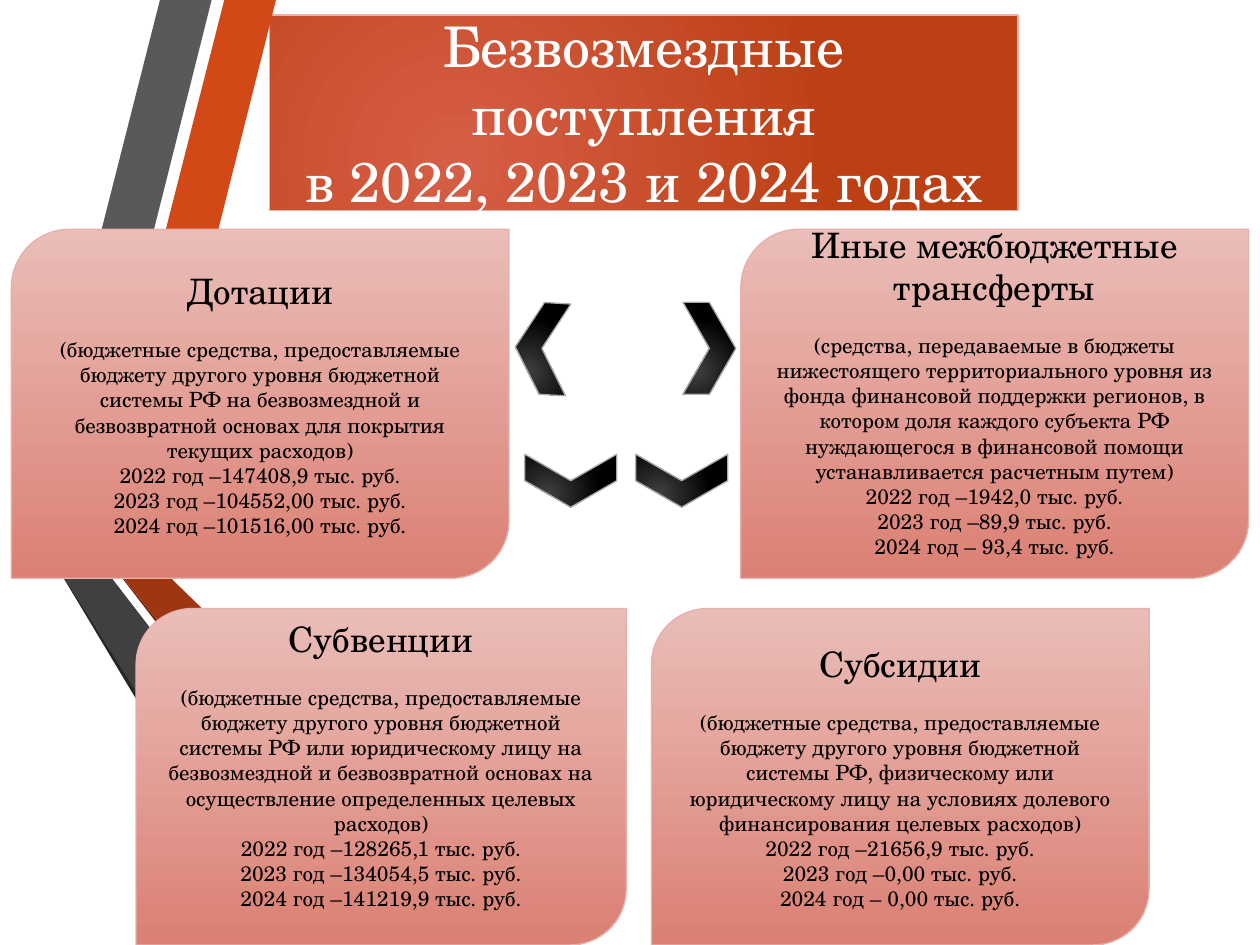
"""Build the slide on gratuitous budget receipts for 2022-2024."""
from lxml import etree
from pptx import Presentation
from pptx.dml.color import RGBColor
from pptx.enum.shapes import MSO_SHAPE
from pptx.enum.text import MSO_ANCHOR, MSO_AUTO_SIZE, PP_ALIGN
from pptx.oxml.ns import qn
from pptx.util import Inches, Pt

CARD_SHAPE = MSO_SHAPE.ROUND_2_DIAG_RECTANGLE
CHEVRON = MSO_SHAPE.CHEVRON
CENTER = PP_ALIGN.CENTER
MIDDLE = MSO_ANCHOR.MIDDLE
NO_AUTOFIT = MSO_AUTO_SIZE.NONE
FONT = "TeX Gyre Schola"
COLORS = {
    "white": "FFFFFF", "black": "000000",
    "title_light": "D65E46", "title_dark": "BC4014",
    "card_light": "EABDB8", "card_dark": "DB8074", "card_line": "E6B1AC",
    "arrow_light": "404040", "arrow_line": "ABABAB",
    "orange": "D34817", "orange_fold": "9E3611", "orange_edge": "69240C",
    "gray": "595959", "gray_fold": "404040", "gray_edge": "262626",
}


def paint(shape, light, dark, outline, radial):
    shape.fill.gradient()
    for stop, color in zip(shape.fill.gradient_stops, (light, dark)):
        stop.color.rgb = RGBColor.from_string(COLORS[color])
    if radial:
        gradient = shape._element.spPr.find(qn("a:gradFill"))
        gradient.remove(gradient.find(qn("a:lin")))
        glow = etree.SubElement(gradient, qn("a:path"), path="circle")
        etree.SubElement(glow, qn("a:fillToRect"), l="50000", t="100000", r="100000", b="50000")
    else:
        shape.fill.gradient_angle = 270
    shape.line.color.rgb = RGBColor.from_string(COLORS[outline])
    shape.line.width = Pt(0.75)


def write(paragraph, text, size, color):
    paragraph.text = text
    paragraph.alignment = CENTER
    paragraph.font.name = FONT
    paragraph.font.size = Pt(size)
    paragraph.font.color.rgb = RGBColor.from_string(COLORS[color])


prs = Presentation()
prs.slide_width, prs.slide_height = Inches(10), Inches(7.5)
slide = prs.slides.add_slide(prs.slide_layouts[5])

ribbons = [
    ("orange", [(0.7, 4.24), (1.1, 4.34), (2.19, 0), (1.78, 0)]),
    ("gray", [(1.68, 0), (1.27, 0), (0.22, 4.13), (0.62, 4.22)]),
    ("gray_edge", [(0.23, 4.13), (2.25, 7.5), (2.35, 7.5)]),
    ("orange_edge", [(3.3, 7.5), (0.71, 4.25), (3.21, 7.5)]),
    ("orange_fold", [(0.7, 4.24), (0.71, 4.25), (3.3, 7.5), (4.35, 7.5), (1.1, 4.34)]),
    ("gray_fold", [(3.13, 7.5), (0.68, 4.32), (0.62, 4.22), (0.22, 4.13), (2.35, 7.5)]),
]
for color, corners in ribbons:
    points = [(Inches(x), Inches(y)) for x, y in corners]
    outline = slide.shapes.build_freeform(*points[0])
    outline.add_line_segments(points[1:])
    ribbon = outline.convert_to_shape()
    ribbon.shadow.inherit = False
    ribbon.fill.solid()
    ribbon.fill.fore_color.rgb = RGBColor.from_string(COLORS[color])
    ribbon.line.fill.background()

title = slide.shapes.title
title.left, title.top = Inches(2.14), Inches(0.12)
title.width, title.height = Inches(5.94), Inches(1.55)
etree.SubElement(title._element.spPr, qn("a:prstGeom"), prst="roundRect")
paint(title, "title_light", "title_dark", "card_line", radial=True)
title.text_frame.text = "Безвозмездные поступления\nв 2022, 2023 и 2024 годах"
title.text_frame.auto_size = NO_AUTOFIT
title.text_frame.vertical_anchor = MIDDLE
for line in title.text_frame.paragraphs:
    write(line, line.text, 32, "white")

cards = [
    (0.09, 1.82, 3.95, 2.77, 0.05, "Дотации",
     "(бюджетные средства, предоставляемые бюджету другого уровня бюджетной системы РФ "
     "на безвозмездной и безвозвратной основах для покрытия текущих расходов)",
     ("–147408,9", "–104552,00", "–101516,00")),
    (1.08, 4.83, 3.89, 2.67, 0.25, "Субвенции",
     "(бюджетные средства, предоставляемые бюджету другого уровня бюджетной системы РФ "
     "или юридическому лицу на безвозмездной и безвозвратной основах "
     "на осуществление определенных целевых расходов)",
     ("–128265,1", "–134054,5", "–141219,9")),
    (5.17, 4.83, 3.95, 2.67, 0.05, "Субсидии",
     "(бюджетные средства, предоставляемые бюджету другого уровня бюджетной системы РФ, "
     "физическому или юридическому лицу на условиях долевого финансирования целевых расходов)",
     ("–21656,9", "–0,00", "– 0,00")),
    (5.88, 1.82, 4.03, 2.77, 0.25, "Иные межбюджетные трансферты",
     "(средства, передаваемые в бюджеты нижестоящего территориального уровня из фонда "
     "финансовой поддержки регионов, в котором доля каждого субъекта РФ нуждающегося "
     "в финансовой помощи устанавливается расчетным путем)",
     ("–1942,0", "–89,9", "– 93,4")),
]
for left, top, width, height, bottom_margin, heading, description, amounts in cards:
    card = slide.shapes.add_shape(CARD_SHAPE, Inches(left), Inches(top), Inches(width), Inches(height))
    card.shadow.inherit = False
    paint(card, "card_light", "card_dark", "card_line", radial=False)
    frame = card.text_frame
    frame.word_wrap = True
    frame.vertical_anchor = MIDDLE
    frame.margin_bottom = Inches(bottom_margin)
    write(frame.paragraphs[0], heading, 20, "black")
    frame.paragraphs[0].space_after = Pt(14.4)
    years = [f"{year} год {amount} тыс. руб." for year, amount in zip((2022, 2023, 2024), amounts)]
    for text in [description, *years]:
        write(frame.add_paragraph(), text, 12, "black")

for left, top, rotation in [(5.42, 2.4, 0), (5.2, 3.45, 90), (4.32, 3.45, 90), (4.09, 2.4, 183.4)]:
    arrow = slide.shapes.add_shape(CHEVRON, Inches(left), Inches(top), Inches(0.42), Inches(0.73))
    arrow.rotation = rotation
    arrow.shadow.inherit = False
    paint(arrow, "arrow_light", "black", "arrow_line", radial=True)

prs.save("out.pptx")
